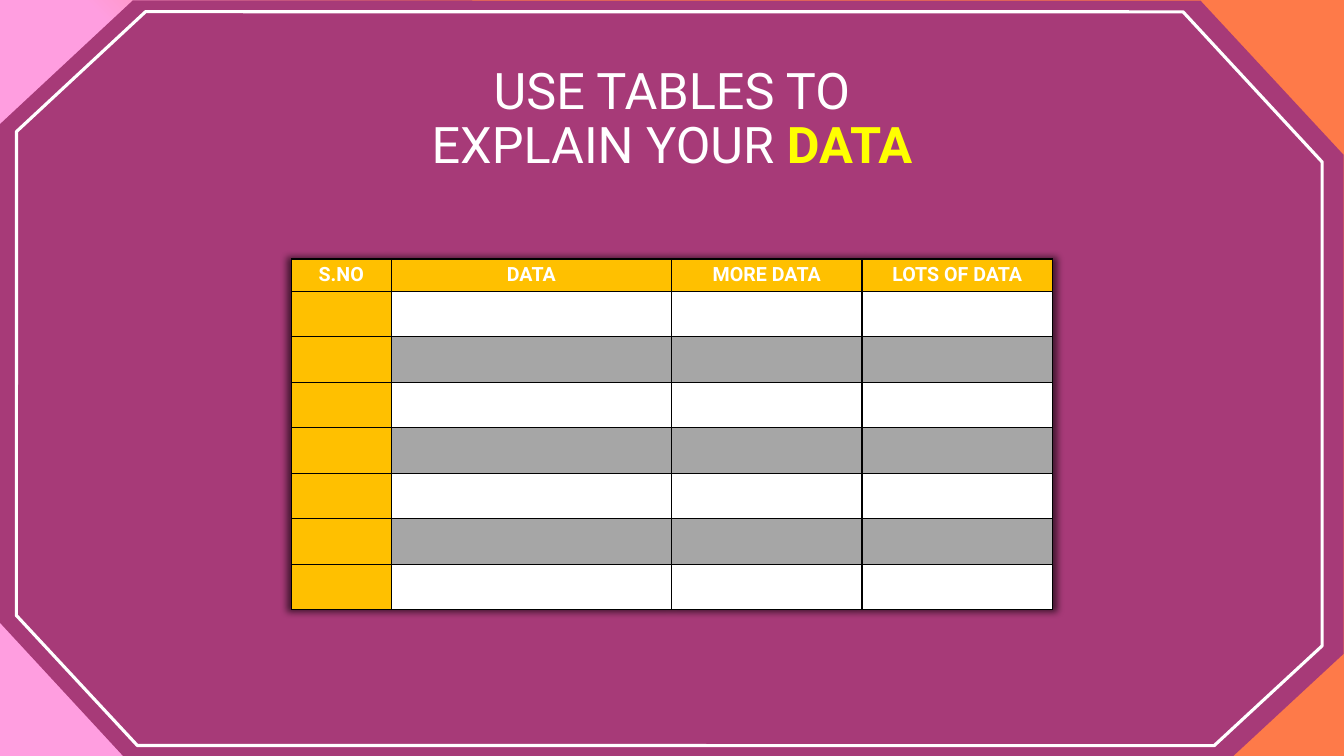
from dataclasses import dataclass
from math import cos, radians, sin

from lxml.etree import SubElement
from pptx import Presentation
from pptx.dml.color import RGBColor as Rgb
from pptx.enum.text import MSO_ANCHOR as Anchor, PP_ALIGN as Align
from pptx.oxml import parse_xml
from pptx.oxml.ns import nsdecls, qn
from pptx.util import Inches, Pt


@dataclass(frozen=True)
class Theme:
    font: str = "Roboto"
    title_size: int = 36
    header_size: int = 14
    orange: str = "FE7A49"
    pink: str = "FF9EE0"
    panel: str = "A73A78"
    white: str = "FFFFFF"
    yellow: str = "FFFF00"
    gold: str = "FFC000"
    gray: str = "A6A6A6"
    black: str = "000000"


class SlideBuilder:
    def __init__(self, page, theme):
        self.page = page
        self.theme = theme

    def background(self, stops):
        """Fill the page with a radial gradient centred at the top right."""
        fill = self.page.background.fill
        fill.gradient()
        for stop, (position, color) in zip(fill.gradient_stops, stops):
            stop.position = position
            stop.color.rgb = Rgb.from_string(color)
        linear = next(self.page.element.iter(qn("a:lin")))
        radial = parse_xml(
            f'<a:path {nsdecls("a")} path="circle">'
            '<a:fillToRect l="100000" b="100000"/></a:path>')
        linear.getparent().replace(linear, radial)

    def tilted_outline(self, points, center, angle, fill=None, line=None,
                       width=1):
        """Draw a polygon, given as seen on the page, as a turned shape."""
        center_x, center_y = center
        cosine, sine = cos(radians(angle)), sin(radians(angle))
        corners = []
        for x, y in points:
            across, down = x - center_x, y - center_y
            corners.append((
                Inches(center_x + across * cosine + down * sine),
                Inches(center_y - across * sine + down * cosine)))
        builder = self.page.shapes.build_freeform(*corners[0])
        builder.add_line_segments(corners[1:], close=True)
        shape = builder.convert_to_shape()
        shape.rotation = angle
        shape.shadow.inherit = False
        if fill:
            shape.fill.solid()
            shape.fill.fore_color.rgb = Rgb.from_string(fill)
        else:
            shape.fill.background()
        if line:
            shape.line.color.rgb = Rgb.from_string(line)
            shape.line.width = Pt(width)
        else:
            shape.line.fill.background()

    def add_span(self, para, text, size, color, bold=False):
        span = para.add_run()
        span.text = text
        span.font.name = self.theme.font
        span.font.size = Pt(size)
        span.font.bold = bold
        span.font.color.rgb = Rgb.from_string(color)

    def title(self, left, top, width, height, spans):
        box = self.page.shapes.add_textbox(
            Inches(left), Inches(top), Inches(width), Inches(height))
        frame = box.text_frame
        frame.word_wrap = True
        frame.vertical_anchor = Anchor.BOTTOM
        frame.margin_left = frame.margin_right = Inches(0.1)
        frame.margin_top = frame.margin_bottom = Inches(0.1)
        para = frame.paragraphs[0]
        para.alignment = Align.CENTER
        para.line_spacing = 0.9
        for text, color, bold in spans:
            self.add_span(para, text, self.theme.title_size, color, bold)

    def table(self, left, top, widths, heights, headers):
        frame = self.page.shapes.add_table(
            len(heights), len(widths), Inches(left), Inches(top),
            Inches(sum(widths)), Inches(sum(heights)))
        table = frame.table
        for column, width in zip(table.columns, widths):
            column.width = Inches(width)
        for row, height in zip(table.rows, heights):
            row.height = Inches(height)
        self.table_shadow(table)

        # Gold header row and first column, banded body
        for i in range(len(heights)):
            for j in range(len(widths)):
                cell = table.cell(i, j)
                band = self.theme.white if i % 2 else self.theme.gray
                color = self.theme.gold if i == 0 or j == 0 else band
                cell.margin_left = cell.margin_right = Inches(0.08)
                cell.margin_top = cell.margin_bottom = Inches(0.04)
                self.cell_borders(cell)
                cell.fill.solid()
                cell.fill.fore_color.rgb = Rgb.from_string(color)
        for j, text in enumerate(headers):
            para = table.cell(0, j).text_frame.paragraphs[0]
            para.alignment = Align.CENTER
            self.add_span(para, text, self.theme.header_size,
                          self.theme.white, bold=True)

    def table_shadow(self, table):
        properties = next(table._tbl.iter(qn("a:tblPr")))
        properties.insert(0, parse_xml(
            f'<a:effectLst {nsdecls("a")}>'
            '<a:outerShdw blurRad="63500" sx="101000" sy="101000" '
            'algn="ctr" rotWithShape="0">'
            f'<a:srgbClr val="{self.theme.black}"><a:alpha val="60000"/>'
            '</a:srgbClr></a:outerShdw></a:effectLst>'))

    def cell_borders(self, cell):
        properties = cell._tc.get_or_add_tcPr()
        for side in ("a:lnL", "a:lnR", "a:lnT", "a:lnB"):
            border = SubElement(properties, qn(side), w=str(Pt(1)))
            solid = SubElement(border, qn("a:solidFill"))
            SubElement(solid, qn("a:srgbClr"), val=self.theme.black)


def main():
    deck = Presentation()
    deck.slide_width = Inches(13.33)
    deck.slide_height = Inches(7.5)
    theme = Theme()
    slide = SlideBuilder(deck.slides.add_slide(deck.slide_layouts[6]), theme)

    # Backdrop: coloured corners, panel and white frame
    tilt = 47.1
    slide.background([(0.43, theme.orange), (0.60, theme.pink)])
    slide.tilted_outline(
        [(1.32, 0), (11.91, 0), (13.33, 1.53), (13.33, 6.48),
         (12.23, 7.5), (1.23, 7.5), (0, 6.17), (0, 1.23)],
        (6.67, 3.86), tilt, fill=theme.panel)
    slide.tilted_outline(
        [(1.45, 0.11), (11.74, 0.11), (13.12, 1.6), (13.12, 6.4),
         (12.05, 7.39), (1.37, 7.39), (0.17, 6.1), (0.17, 1.3)],
        (6.65, 3.86), tilt, line=theme.white, width=2.25)

    # Title
    slide.title(3.83, 0.51, 5.67, 1.32, [
        ("USE TABLES TO EXPLAIN YOUR ", theme.white, False),
        ("DATA", theme.yellow, True)])

    # Data table: one header row and seven equal body rows
    header_height, body_height, body_rows = 0.32, 3.16, 7
    slide.table(
        2.89, 2.57, [0.99, 2.78, 1.89, 1.89],
        [header_height] + [body_height / body_rows] * body_rows,
        ["S.NO", "DATA", "MORE DATA", "LOTS OF DATA"])

    deck.save("out.pptx")


if __name__ == "__main__":
    main()
